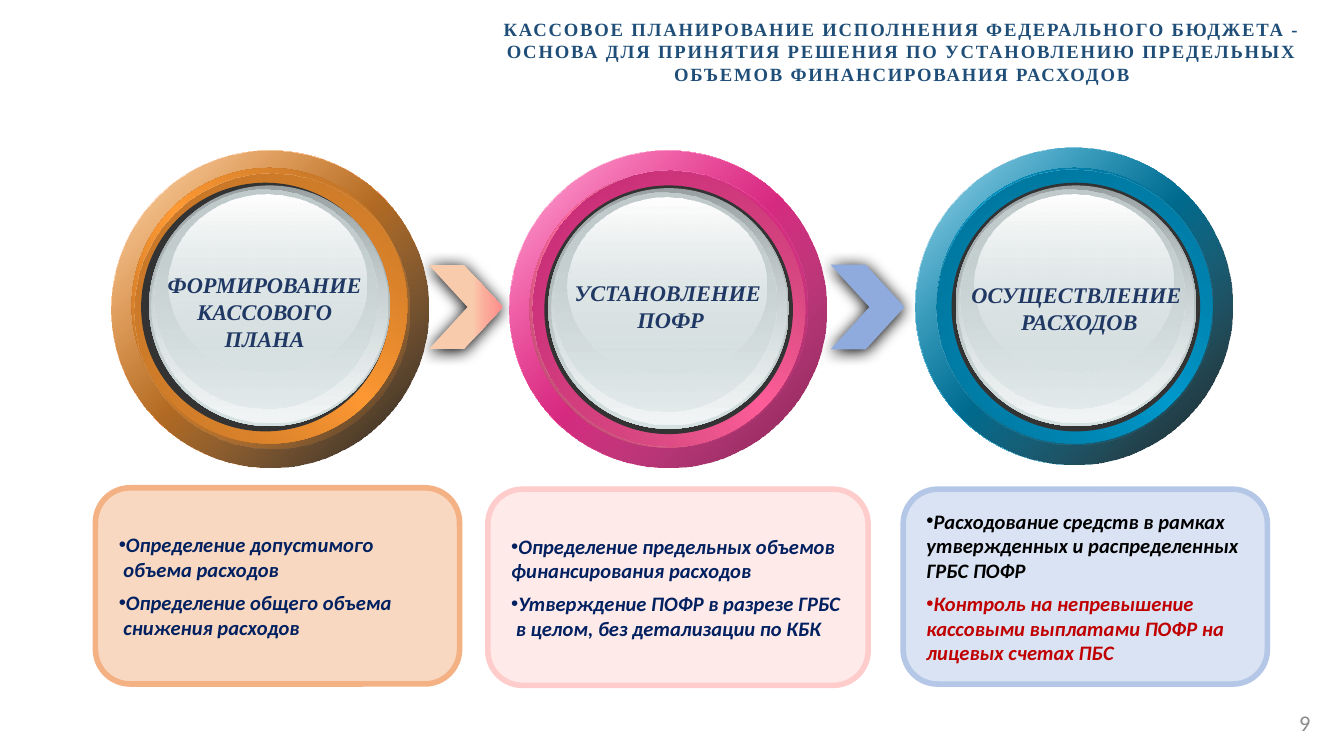
"""Build the slide on cash planning of the federal budget: three stages in a row."""
from copy import deepcopy

from lxml import etree
from pptx import Presentation
from pptx import util as u
from pptx.dml.color import RGBColor
from pptx.enum import shapes, text
from pptx.oxml.ns import qn

WHITE = RGBColor(0xFF, 0xFF, 0xFF)
BLACK = RGBColor(0x00, 0x00, 0x00)
GRAY = RGBColor(0x8C, 0x8C, 0x8C)
CHARCOAL = RGBColor(0x33, 0x33, 0x33)
TITLE_BLUE = RGBColor(0x1F, 0x4E, 0x79)
CAPTION_BLUE = RGBColor(0x20, 0x38, 0x64)
NAVY = RGBColor(0x00, 0x20, 0x60)
RED = RGBColor(0xC0, 0x00, 0x00)
STEEL = RGBColor(0x99, 0xA1, 0xA2)
SILVER = RGBColor(0xC1, 0xCB, 0xCC)
MIST = RGBColor(0xD6, 0xE1, 0xE2)
FROST = RGBColor(0xF2, 0xF5, 0xF5)
ORANGE = RGBColor(0xFF, 0x99, 0x33)
ORANGE_DARK = RGBColor(0xB0, 0x69, 0x23)
ORANGE_MID = RGBColor(0xB8, 0x6E, 0x25)
PINK = RGBColor(0xFF, 0x33, 0x99)
PINK_SOFT = RGBColor(0xFF, 0x66, 0x99)
PINK_DARK = RGBColor(0xB0, 0x46, 0x69)
PINK_MID = RGBColor(0xB8, 0x25, 0x6E)
PLUM = RGBColor(0x83, 0x1A, 0x4E)
TEAL = RGBColor(0x00, 0x99, 0xCC)
TEAL_DARK = RGBColor(0x00, 0x69, 0x8C)
TEAL_MID = RGBColor(0x00, 0x6E, 0x93)
PEACH = RGBColor(0xF8, 0xCB, 0xAD)
PEACH_LINE = RGBColor(0xF4, 0xB1, 0x83)
SALMON = RGBColor(0xFC, 0xAB, 0x9A)
CORAL = RGBColor(0xFF, 0x8C, 0x8C)
ROSE = RGBColor(0xFF, 0xD9, 0xD9)
ROSE_LINE = RGBColor(0xFF, 0xCC, 0xCC)
SKY = RGBColor(0xDA, 0xE3, 0xF3)
SKY_LINE = RGBColor(0xB4, 0xC7, 0xE7)
PERIWINKLE = RGBColor(0x8F, 0xAA, 0xDC)

WIDTH = 10
HEIGHT = WIDTH * 9 / 16
SERIF, SANS = "Times New Roman", "Calibri"
TITLE = ("КАССОВОЕ ПЛАНИРОВАНИЕ ИСПОЛНЕНИЯ ФЕДЕРАЛЬНОГО БЮДЖЕТА - ОСНОВА ДЛЯ ПРИНЯТИЯ "
         "РЕШЕНИЯ ПО УСТАНОВЛЕНИЮ ПРЕДЕЛЬНЫХ ОБЪЕМОВ ФИНАНСИРОВАНИЯ РАСХОДОВ")
STAGES = [
    dict(caption=["ФОРМИРОВАНИЕ", "КАССОВОГО", "ПЛАНА"], caption_box=(1.14, 1.97, 1.66, 0.71),
         points=[("Определение допустимого\n объема расходов", NAVY),
                 ("Определение общего объема\n снижения расходов", NAVY)],
         box=(0.71, 3.63, 2.71, 1.46), fill=(0, PEACH, 74), line=PEACH_LINE,
         ring=(0.83, 1.12), offsets=[(0.15, 0.13), (0.17, 0.17), (0.22, 0.24)], glass=(0.28, 0.26),
         main=ORANGE, mid=ORANGE_MID, dark=ORANGE_DARK, glow=ORANGE, shade=(100, BLACK, 90)),
    dict(caption=["УСТАНОВЛЕНИЕ\n ПОФР"], caption_box=(4.17, 2.03, 1.6, 0.51),
         points=[("Определение предельных объемов\nфинансирования расходов", NAVY),
                 ("Утверждение ПОФР в разрезе ГРБС\n в целом, без детализации по КБК", NAVY)],
         box=(3.63, 3.64, 2.83, 1.46), fill=(0, ROSE, 53), line=ROSE_LINE,
         ring=(3.79, 1.12), offsets=[(0.15, 0.16), (0.17, 0.15), (0.26, 0.26)], glass=(0.29, 0.28),
         main=PINK, mid=PINK_MID, dark=PINK_DARK, glow=PINK_SOFT, shade=(100, PLUM, 100)),
    dict(caption=["ОСУЩЕСТВЛЕНИЕ\n РАСХОДОВ"], caption_box=(7.12, 2.04, 1.78, 0.51),
         points=[("Расходование средств в рамках\nутвержденных и распределенных\nГРБС ПОФР", BLACK),
                 ("Контроль на непревышение\nкассовыми выплатами ПОФР на \nлицевых счетах ПБС", RED)],
         box=(6.72, 3.64, 2.71, 1.45), fill=(0, SKY, 100), line=SKY_LINE,
         ring=(6.81, 1.1), offsets=[(0.16, 0.15), (0.16, 0.16), (0.27, 0.26)], glass=(0.3, 0.28),
         main=TEAL, mid=TEAL_MID, dark=TEAL_DARK, glow=TEAL, shade=(100, BLACK, 90)),
]
GLASS = [
    ((0, 0), (1.79, 1.79), [(0, STEEL, 100), (100, MIST, 100)]),
    ((0.02, 0.01), (1.75, 1.75), [(0, MIST, 0), (100, FROST, 100)]),
    ((0.04, 0.03), (1.66, 1.63), [(0, SILVER, 100), (100, MIST, 48)]),
    ((0.14, 0.07), (1.48, 1.32), [(0, WHITE, 100), (100, MIST, 38)]),
]
CHEVRONS = [
    (3.19, [(24, PEACH, 100), (59, PEACH, 100), (77, SALMON, 100), (100, CORAL, 100)]),
    (6.18, [(0, PERIWINKLE, 100)]),
]


def inches(values):
    return [u.Inches(value) for value in values]


def add_color(parent, color, alpha):
    node = etree.SubElement(parent, qn("a:srgbClr"), val=str(color))
    etree.SubElement(node, qn("a:alpha"), val=str(alpha * 1000))


def add_shape(holder, kind, box, stops, angle=0, line=None, adjustment=None):
    shape = holder.add_shape(kind, *inches(box))
    if adjustment:
        shape.adjustments[0] = adjustment
    shape.shadow.inherit = False
    shape.fill.background()
    properties = shape._element.spPr
    if len(stops) == 1:
        fill = etree.Element(qn("a:solidFill"))
        add_color(fill, *stops[0][1:])
    else:
        fill = etree.Element(qn("a:gradFill"), rotWithShape="1")
        stop_list = etree.SubElement(fill, qn("a:gsLst"))
        for position, color, alpha in stops:
            add_color(etree.SubElement(stop_list, qn("a:gs"), pos=str(position * 1000)), color, alpha)
        etree.SubElement(fill, qn("a:lin"), ang=str(angle * 60000), scaled="0")
    properties.replace(properties.find(qn("a:noFill")), fill)
    if line:
        shape.line.color.rgb = line
        shape.line.width = u.Pt(3)
    else:
        shape.line.fill.background()
    return shape


def write(shape, paragraphs, size, font, align, anchor=text.MSO_ANCHOR.TOP, wrap=True,
          bold=True, italic=False, spacing=0, bullet=False, gap=0):
    frame = shape.text_frame
    frame.word_wrap = wrap
    frame.auto_size = text.MSO_AUTO_SIZE.NONE
    frame.vertical_anchor = anchor
    for index, (content, color) in enumerate(paragraphs):
        paragraph = frame.add_paragraph() if index else frame.paragraphs[0]
        paragraph.text = content
        paragraph.alignment = align
        paragraph.space_before = u.Pt(gap if index else 0)
        if bullet:
            properties = paragraph._p.get_or_add_pPr()
            properties.set("marL", "0")
            properties.set("indent", "0")
            etree.SubElement(properties, qn("a:buFont"), typeface="Arial")
            etree.SubElement(properties, qn("a:buChar"), char="•")
        for run in paragraph.runs:
            run.font.size, run.font.name = u.Pt(size), font
            run.font.bold, run.font.italic = bold, italic
            run.font.color.rgb = color
            if spacing:
                run._r.rPr.set("spc", str(spacing * 100))
        for line_break in paragraph._p.findall(qn("a:br")):
            line_break.append(deepcopy(paragraph.runs[0]._r.rPr))


def add_ring(slide, stage):
    holder = slide.shapes.add_group_shape().shapes
    main, mid, dark = stage["main"], stage["mid"], stage["dark"]
    rim, core, disc = stage["offsets"]
    layers = [
        ((0, 0), (2.36, 2.36), [(0, WHITE, 100), (50, main, 100), (100, WHITE, 100)], 45),
        ((0, 0), (2.36, 2.36), [(0, main, 32), stage["shade"]], 45),
        (rim, (2.05, 2.05), [(0, dark, 100), (50, stage["glow"], 100), (100, dark, 100)], 315),
        (core, (2.05, 2.05), [(0, mid, 100), (100, main, 0)], 45),
        (disc, (1.85, 1.85), [(0, CHARCOAL, 100)], 0),
    ]
    left, top = stage["glass"]
    layers += [((left + x, top + y), size, stops, 90) for (x, y), size, stops in GLASS]
    ring_left, ring_top = stage["ring"]
    for (x, y), size, stops, angle in layers:
        add_shape(holder, shapes.MSO_SHAPE.OVAL, (ring_left + x, ring_top + y, *size), stops, angle)
    caption = holder.add_textbox(*inches(stage["caption_box"]))
    write(caption, [(line, CAPTION_BLUE) for line in stage["caption"]], 12, SERIF,
          text.PP_ALIGN.CENTER, wrap=False, italic=True)


def main():
    presentation = Presentation()
    presentation.slide_width, presentation.slide_height = inches((WIDTH, HEIGHT))
    slide = presentation.slides.add_slide(presentation.slide_layouts[5])
    title = slide.shapes.title
    title.left, title.top, title.width, title.height = inches((3.57, 0.08, 6.28, 0.61))
    write(title, [(TITLE, TITLE_BLUE)], 10, SERIF, text.PP_ALIGN.CENTER, spacing=1)
    number = slide.shapes.add_textbox(*inches((7.6, 5.23, 2.25, 0.3)))
    write(number, [("9", GRAY)], 12, SANS, text.PP_ALIGN.RIGHT, text.MSO_ANCHOR.MIDDLE, bold=False)
    for left, stops in CHEVRONS:
        chevron = add_shape(slide.shapes, shapes.MSO_SHAPE.CHEVRON, (left, 1.97, 0.55, 0.63),
                            stops, adjustment=0.525)
        shadow = etree.SubElement(chevron._element.spPr.find(qn("a:effectLst")), qn("a:outerShdw"),
                                  blurRad=str(u.Pt(8.5)), dist=str(u.Pt(1)), dir="5400000")
        add_color(shadow, BLACK, 100)
    for stage in STAGES:
        add_ring(slide, stage)
        box = add_shape(slide.shapes, shapes.MSO_SHAPE.ROUNDED_RECTANGLE, stage["box"],
                        [stage["fill"]], line=stage["line"], adjustment=0.177)
        box.text_frame.margin_right = 0
        write(box, stage["points"], 11, SANS, text.PP_ALIGN.LEFT, text.MSO_ANCHOR.MIDDLE,
              italic=True, bullet=True, gap=4.5)
    presentation.save("out.pptx")


if __name__ == "__main__":
    main()
